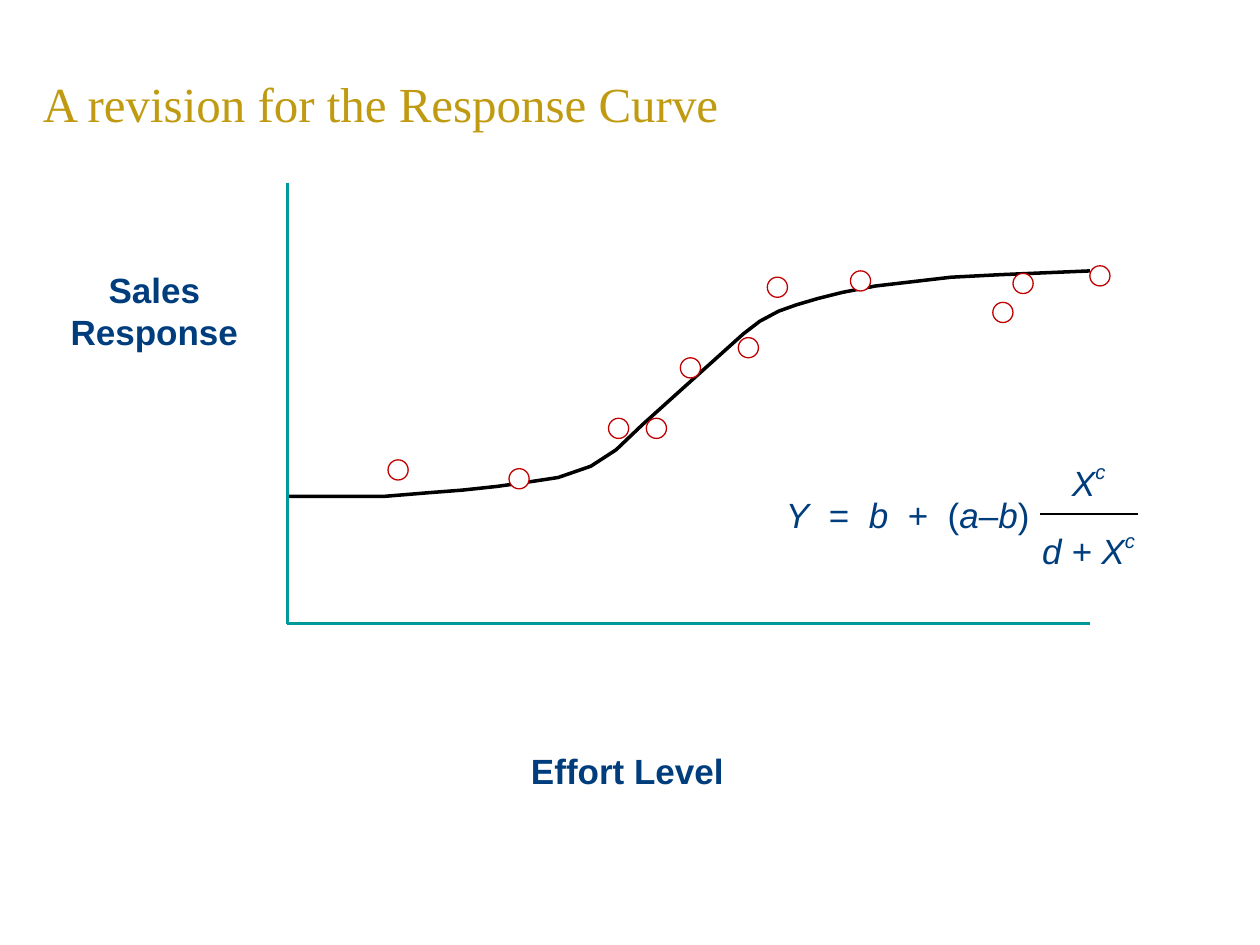
from lxml import etree
from pptx import Presentation
from pptx.dml.color import RGBColor
from pptx.enum.shapes import MSO_CONNECTOR, MSO_SHAPE
from pptx.enum.text import MSO_ANCHOR, MSO_AUTO_SIZE, PP_ALIGN
from pptx.oxml.ns import qn
from pptx.util import Inches, Pt

LINE = MSO_CONNECTOR.STRAIGHT
OVAL = MSO_SHAPE.OVAL
MIDDLE = MSO_ANCHOR.MIDDLE
NO_FIT = MSO_AUTO_SIZE.NONE
LEFT, CENTER = PP_ALIGN.LEFT, PP_ALIGN.CENTER

COLORS = {"title": "C09B12", "text": "003D7D", "axis": "009999",
          "curve": "000000", "point": "C00000", "white": "FFFFFF"}

# Content: text runs are (text, style), i = italic, b = bold, s = superscript
TITLE = "A revision for the Response Curve"
AXIS_LABELS = [("Sales Response", (0.39, 2.08, 1.67, 0.77)),
               ("Effort Level", (4.11, 5.9, 1.74, 0.44))]
EQUATION = [("\tY", "i"), ("  =  ", ""), ("b", "i"), ("  +  (", ""),
            ("a", "i"), ("–", ""), ("b", "i"), (")", "")]
FRACTION = [([("X", "i"), ("c", "is")], 0.9),
            ([("d + X", "i"), ("c", "is")], 0.75)]

ORIGIN, AXIS_TOP, AXIS_RIGHT = (2.28, 4.95), 1.45, 8.65
CURVE = [(2.28, 3.94), (2.79, 3.94), (3.04, 3.94), (3.41, 3.91), (3.67, 3.89),
         (3.95, 3.86), (4.23, 3.82), (4.43, 3.79), (4.69, 3.7), (4.89, 3.57),
         (5.1, 3.37), (5.9, 2.65), (6.03, 2.55), (6.18, 2.47), (6.32, 2.42),
         (6.49, 2.37), (6.69, 2.32), (6.95, 2.27), (7.55, 2.2), (7.94, 2.18),
         (8.65, 2.15)]
POINT_SIZE = 0.16
POINTS = [(8.04, 2.17), (8.65, 2.11), (5.4, 2.84), (7.88, 2.4), (4.83, 3.32),
          (6.09, 2.2), (6.75, 2.15), (5.86, 2.68), (5.13, 3.32), (4.04, 3.72),
          (3.08, 3.65)]


def color(name):
    return RGBColor.from_string(COLORS[name])


def add_runs(para, runs, size=20, font="Arial", ink="text"):
    for text, style in runs:
        span = para.add_run()
        span.text = text
        span.font.name, span.font.size = font, Pt(size)
        span.font.color.rgb = color(ink)
        span.font.bold, span.font.italic = "b" in style, "i" in style
        if "s" in style:
            span.font._element.set("baseline", "46000")


def add_box(shapes, place, wrap=True):
    frame = shapes.add_textbox(*map(Inches, place)).text_frame
    frame.word_wrap = wrap
    return frame


def set_line(shape, ink, width):
    shape.line.color.rgb = color(ink)
    shape.line.width = Pt(width)


def add_line(shapes, start, end, ink, width):
    line = shapes.add_connector(LINE, *map(Inches, start + end))
    set_line(line, ink, width)
    etree.SubElement(line._element.spPr, qn("a:effectLst"))


deck = Presentation()
deck.slide_width, deck.slide_height = Inches(10), Inches(7.5)
page = deck.slides.add_slide(deck.slide_layouts[5])
shapes = page.shapes

# Title
title = shapes.title
title.left, title.top, title.width, title.height = map(Inches, (0.24, 0.43, 6.97, 0.77))
title.text_frame.auto_size = NO_FIT
title.text_frame.vertical_anchor = MIDDLE
para = title.text_frame.paragraphs[0]
para.alignment = LEFT
add_runs(para, [(TITLE, "")], 28, "Times New Roman", "title")

# Equation, started at a tab stop
para = add_box(shapes, (5.13, 3.87, 4.24, 0.86)).paragraphs[0]
tabs = etree.SubElement(para._p.get_or_add_pPr(), qn("a:tabLst"))
etree.SubElement(tabs, qn("a:tab"), pos=str(Inches(1.01)), algn="l")
add_runs(para, EQUATION)

# Response curve
builder = shapes.build_freeform(*map(Inches, CURVE[0]), scale=1.0)
builder.add_line_segments([(Inches(x), Inches(y)) for x, y in CURVE[1:]], close=False)
curve = builder.convert_to_shape()
curve.shadow.inherit = False
curve.fill.background()
set_line(curve, "curve", 2)

# Axes and their labels
for start, end in [((ORIGIN[0], AXIS_TOP), ORIGIN), (ORIGIN, (AXIS_RIGHT, ORIGIN[1]))]:
    add_line(shapes, start, end, "axis", 2)
for text, place in AXIS_LABELS:
    para = add_box(shapes, place).paragraphs[0]
    para.alignment = CENTER
    add_runs(para, [(text, "b")])

# Fraction: both terms and the bar between them
fraction = shapes.add_group_shape().shapes
frame = add_box(fraction, (8.15, 3.64, 0.98, 0.82), wrap=False)
for index, (runs, spacing) in enumerate(FRACTION):
    para = frame.add_paragraph() if index else frame.paragraphs[0]
    para.alignment = CENTER
    para.line_spacing = spacing
    para.space_before = Pt(10 if index else 0)
    para.space_after = Pt(10)
    add_runs(para, runs)
add_line(fraction, (8.25, 4.08), (9.03, 4.08), "curve", 1)

# Observed points
for x, y in POINTS:
    point = shapes.add_shape(OVAL, *map(Inches, (x, y, POINT_SIZE, POINT_SIZE)))
    point.shadow.inherit = False
    point.fill.solid()
    point.fill.fore_color.rgb = color("white")
    set_line(point, "point", 0.75)

deck.save("out.pptx")
